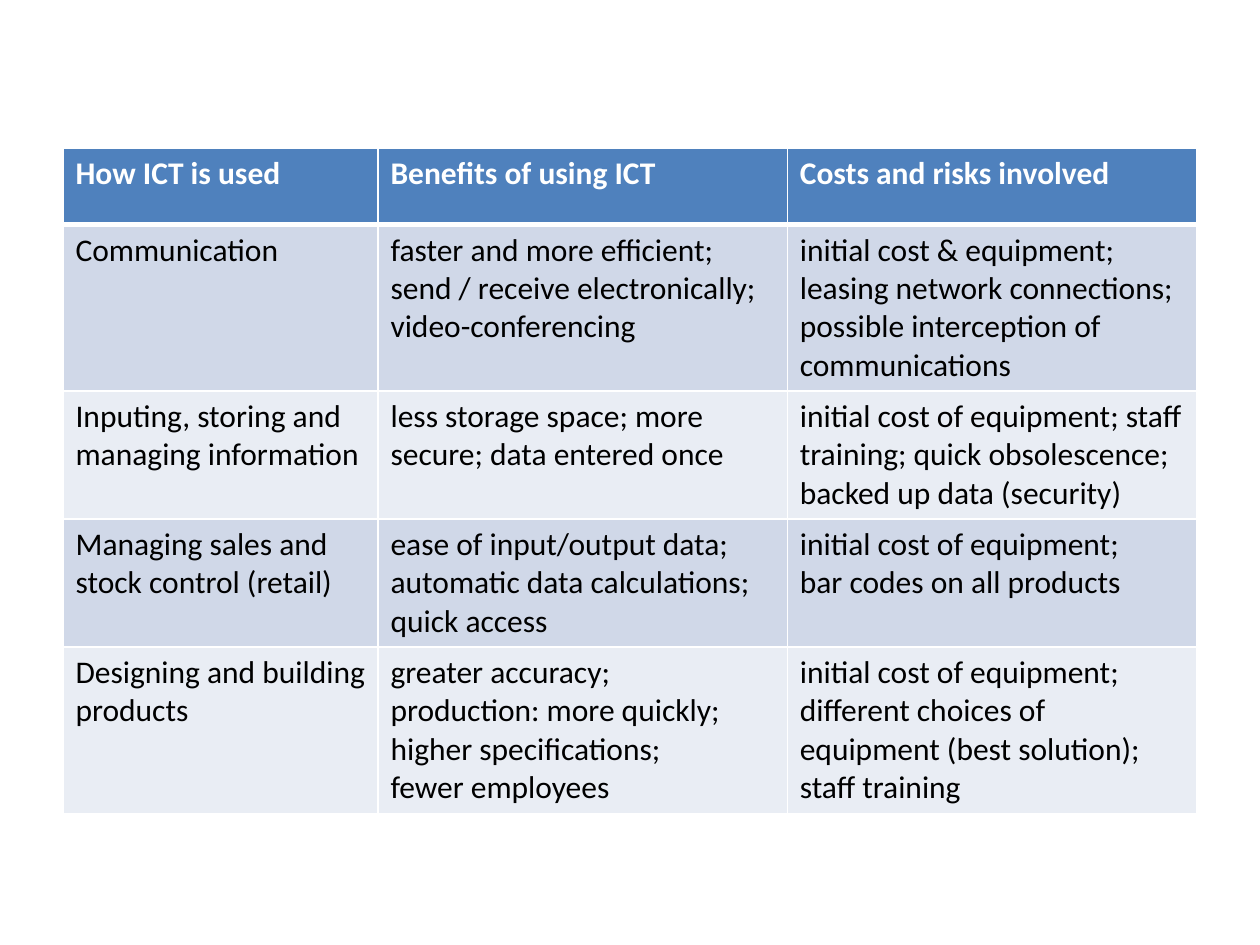
from pptx import Presentation
from pptx.dml.color import RGBColor
from pptx.oxml.ns import qn
from pptx.util import Cm, Pt
from lxml.etree import SubElement

COLORS = {
    "header": "4F81BD",
    "odd_row": "D0D8E8",
    "even_row": "E9EDF4",
    "header_text": "FFFFFF",
    "body_text": "000000",
    "border": "FFFFFF",
}

ICT_USES = [
    ["How ICT is used", "Benefits of using ICT", "Costs and risks involved"],
    [
        "Communication",
        "faster and more efficient;\nsend / receive electronically;\nvideo-conferencing",
        "initial cost & equipment;\nleasing network connections;\n"
        "possible interception of communications",
    ],
    [
        "Inputing, storing and managing information",
        "less storage space; more secure; data entered once",
        "initial cost of equipment; staff training; quick obsolescence;\n"
        "backed up data (security)",
    ],
    [
        "Managing sales and stock control (retail)",
        "ease of input/output data;\nautomatic data calculations; quick access",
        "initial cost of equipment;\nbar codes on all products",
    ],
    [
        "Designing and building products",
        "greater accuracy;\nproduction: more quickly; higher specifications;\nfewer employees",
        "initial cost of equipment;\ndifferent choices of equipment (best solution);\n"
        "staff training",
    ],
]


class SlideBuilder:
    font = "Calibri"
    size = Pt(18)
    thin = Pt(1)
    thick = Pt(3)

    def __init__(self, slide):
        self.slide = slide

    def color(self, role):
        return RGBColor.from_string(COLORS[role])

    def table(self, left, top, widths, row_height, rows):
        frame = self.slide.shapes.add_table(
            len(rows), len(widths), left, top, sum(widths), row_height * len(rows)
        )
        grid = frame.table
        for column, width in zip(grid.columns, widths):
            column.width = width
        for row_index, texts in enumerate(rows):
            grid.rows[row_index].height = row_height
            for column_index, text in enumerate(texts):
                self.cell(grid.cell(row_index, column_index), text, row_index)

    def cell(self, cell, text, row_index):
        is_header = row_index == 0
        self.borders(
            cell,
            top=self.thick if row_index == 1 else self.thin,
            bottom=self.thick if is_header else self.thin,
        )
        band = "odd_row" if row_index % 2 else "even_row"
        cell.fill.solid()
        cell.fill.fore_color.rgb = self.color("header" if is_header else band)
        cell.text_frame.text = text
        for paragraph in cell.text_frame.paragraphs:
            for run in paragraph.runs:
                run.font.name = self.font
                run.font.size = self.size
                run.font.bold = is_header
                run.font.color.rgb = self.color("header_text" if is_header else "body_text")

    def borders(self, cell, top, bottom):
        properties = cell._tc.get_or_add_tcPr()
        sides = {"a:lnL": self.thin, "a:lnR": self.thin, "a:lnT": top, "a:lnB": bottom}
        for side, width in sides.items():
            line = SubElement(properties, qn(side), w=str(width))
            fill = SubElement(line, qn("a:solidFill"))
            SubElement(fill, qn("a:srgbClr"), val=COLORS["border"])


def main():
    presentation = Presentation()
    presentation.slide_width = Cm(25.4)
    presentation.slide_height = Cm(19.05)
    builder = SlideBuilder(presentation.slides.add_slide(presentation.slide_layouts[6]))
    builder.table(
        left=Cm(1.27),
        top=Cm(2.98),
        widths=[Cm(6.35), Cm(8.25), Cm(8.25)],
        row_height=Cm(1.55),
        rows=ICT_USES,
    )
    presentation.save("out.pptx")


if __name__ == "__main__":
    main()
